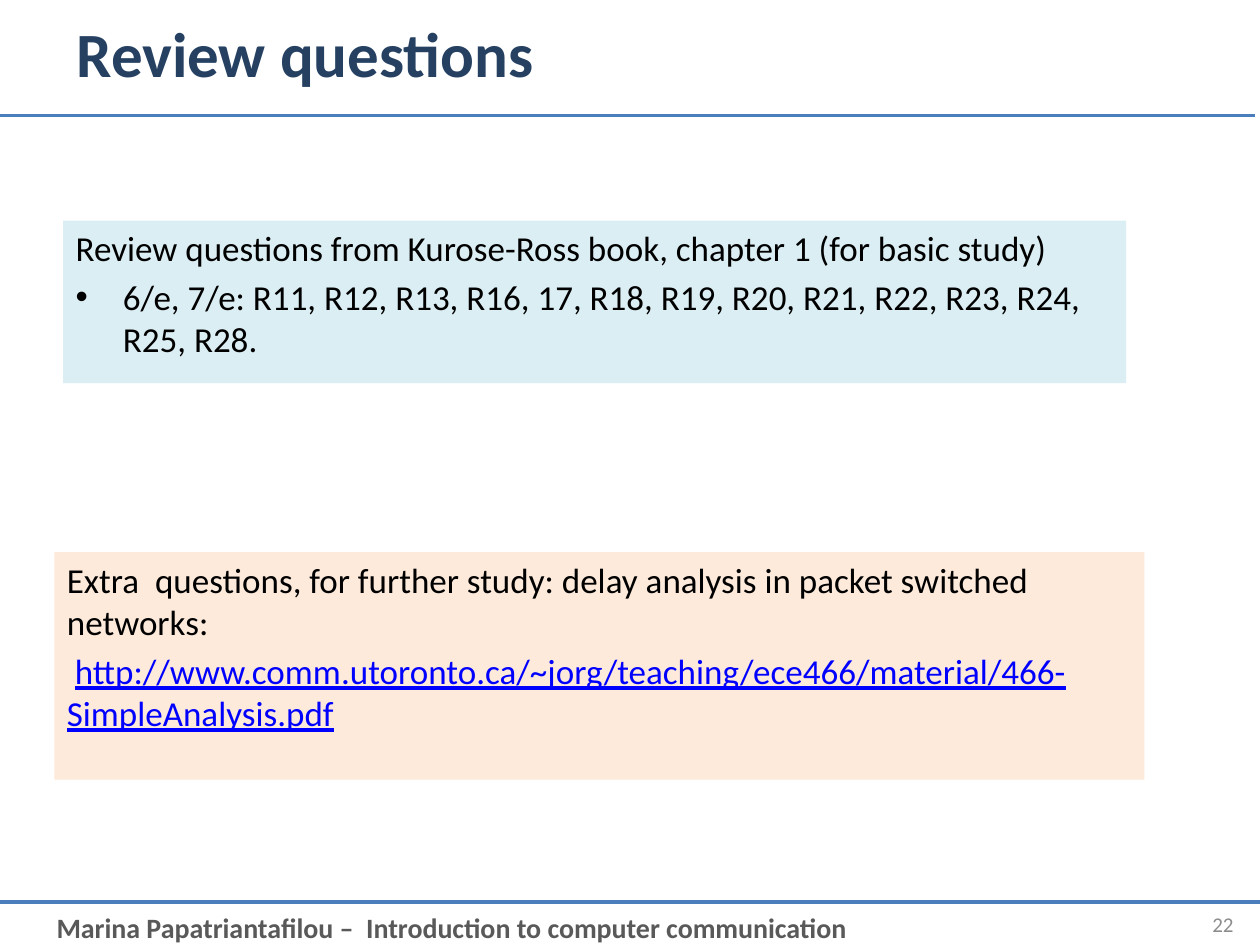
from dataclasses import dataclass

from lxml.etree import SubElement
from pptx import Presentation
from pptx.dml.color import RGBColor
from pptx.enum.shapes import MSO_CONNECTOR
from pptx.enum.text import MSO_ANCHOR, MSO_AUTO_SIZE, PP_ALIGN
from pptx.oxml.ns import qn
from pptx.util import Pt


@dataclass(frozen=True)
class Theme:
    font: str = "Calibri"
    title_color: str = "254061"
    body_color: str = "000000"
    link_color: str = "0000FF"
    footer_color: str = "595959"
    number_color: str = "8C8C8C"
    rule_color: str = "4B7EBC"
    basic_fill: str = "DBEEF4"
    extra_fill: str = "FDEADA"
    title_size: int = 36
    body_size: int = 20
    footer_size: int = 16
    number_size: int = 12
    rule_width: float = 2.25
    paragraph_gap: int = 4
    bullet_indent: int = 27


THEME = Theme()


def place(shape, left, top, width, height):
    shape.left, shape.top = Pt(left), Pt(top)
    shape.width, shape.height = Pt(width), Pt(height)


def add_run(paragraph, text, size, color, bold=False, underline=False):
    run = paragraph.add_run()
    run.text = text
    font = run.font
    font.name, font.size = THEME.font, Pt(size)
    font.bold, font.underline = bold, underline
    font.color.rgb = RGBColor.from_string(color)


def add_rule(slide, left, y, width):
    rule = slide.shapes.add_connector(
        MSO_CONNECTOR.STRAIGHT, Pt(left), Pt(y), Pt(left + width), Pt(y))
    rule.line.color.rgb = RGBColor.from_string(THEME.rule_color)
    rule.line.width = Pt(THEME.rule_width)
    SubElement(rule._element.spPr, qn("a:effectLst"))


def add_label(slide, box, text, size, color, bold=False,
              align=PP_ALIGN.LEFT, anchor=MSO_ANCHOR.TOP):
    label = slide.shapes.add_textbox(*map(Pt, box))
    frame = label.text_frame
    frame.word_wrap = True
    frame.vertical_anchor = anchor
    frame.paragraphs[0].alignment = align
    add_run(frame.paragraphs[0], text, size, color, bold)


def set_title(title, box, text):
    place(title, *box)
    frame = title.text_frame
    frame.auto_size = MSO_AUTO_SIZE.NONE
    frame.vertical_anchor = MSO_ANCHOR.MIDDLE
    frame.paragraphs[0].alignment = PP_ALIGN.LEFT
    add_run(frame.paragraphs[0], text, THEME.title_size, THEME.title_color, bold=True)


def set_bullet(paragraph, bullet):
    """Give the paragraph a hanging bullet, or none if bullet is False."""
    indent = Pt(THEME.bullet_indent) if bullet else 0
    properties = paragraph._p.get_or_add_pPr()
    properties.set("marL", str(indent))
    properties.set("indent", str(-indent))
    if bullet:
        SubElement(properties, qn("a:buFont"), typeface="Arial")
        SubElement(properties, qn("a:buChar"), char="•")
    else:
        SubElement(properties, qn("a:buNone"))


def fill_panel(panel, box, fill, paragraphs):
    """Fill a body placeholder; each paragraph is (bullet, [(text, is_link), ...])."""
    place(panel, *box)
    panel.fill.solid()
    panel.fill.fore_color.rgb = RGBColor.from_string(fill)
    frame = panel.text_frame
    frame.auto_size = MSO_AUTO_SIZE.NONE
    for index, (bullet, runs) in enumerate(paragraphs):
        paragraph = frame.add_paragraph() if index else frame.paragraphs[0]
        paragraph.space_before = Pt(THEME.paragraph_gap)
        set_bullet(paragraph, bullet)
        for text, is_link in runs:
            color = THEME.link_color if is_link else THEME.body_color
            add_run(paragraph, text, THEME.body_size, color, underline=is_link)


def main():
    deck = Presentation()
    deck.slide_width, deck.slide_height = Pt(720), Pt(540)
    slide = deck.slides.add_slide(deck.slide_layouts.get_by_name("Two Content"))
    title, basic, extra = slide.placeholders

    add_rule(slide, 0, 515.5, 720)
    add_rule(slide, -3, 66, 720)
    set_title(title, (36.5, 0, 647.5, 60), "Review questions")
    fill_panel(basic, (36, 126, 607.5, 93), THEME.basic_fill, [
        (False, [("Review questions from Kurose-Ross book, chapter 1 (for basic study)", False)]),
        (True, [("6/e, 7/e: R11, R12, R13, R16, 17, R18, R19, R20, R21, R22, "
                 "R23, R24, R25, R28.", False)]),
    ])
    fill_panel(extra, (31, 315.5, 623, 130), THEME.extra_fill, [
        (False, [("Extra  questions, for further study: delay analysis in packet "
                  "switched networks:", False)]),
        (False, [(" ", False),
                 ("http://www.comm.utoronto.ca/~jorg/teaching/ece466/material/"
                  "466-SimpleAnalysis.pdf", True)]),
    ])
    add_label(slide, (25.2, 516.5, 666, 26.5),
              "Marina Papatriantafilou –  Introduction to computer communication",
              THEME.footer_size, THEME.footer_color, bold=True)
    add_label(slide, (654.5, 513.5, 57.5, 28.75), "22", THEME.number_size,
              THEME.number_color, align=PP_ALIGN.RIGHT, anchor=MSO_ANCHOR.MIDDLE)
    deck.save("out.pptx")


if __name__ == "__main__":
    main()
